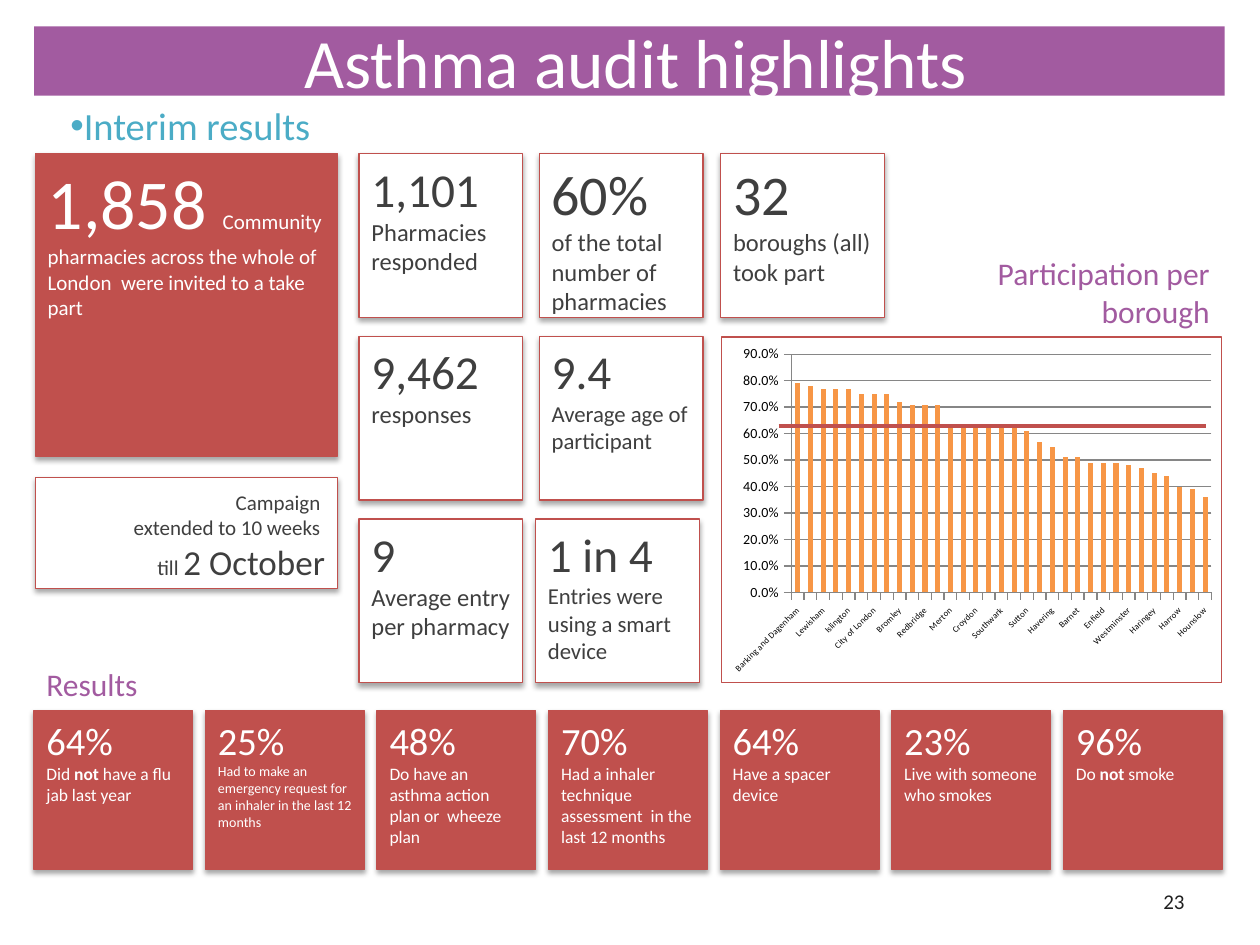
from pptx import Presentation
from pptx.util import Inches, Pt
from pptx.dml.color import RGBColor
from pptx.chart.data import CategoryChartData as Data
from pptx.enum.chart import XL_CHART_TYPE as Kind, XL_TICK_MARK as Tick
from pptx.enum.shapes import MSO_SHAPE as Form, MSO_CONNECTOR as Link
from pptx.enum.text import PP_ALIGN as Al, MSO_ANCHOR as Anc
from pptx.oxml import parse_xml
from pptx.oxml.ns import nsdecls
from lxml.etree import SubElement as Sub

THEME = dict(
    font="Calibri", purple="A25BA0", teal="4BACC6", red="C0504D", white="FFFFFF",
    gray="3F3F3F", dark="202020", black="000000", bar="F79646", grid="868686",
    title=39.6, sub=22, head=18, page=12, num=27, wide=32, huge=40, date=20,
    text=14, snug=13, small=12, fact=22, note=10, tiny=8, cat=5, val=8,
)
T = THEME

STATS = [
    (2.85, 0, [[("1,101", "num")], [("Pharmacies", "text")], [("responded", "text")]]),
    (4.28, 0, [[("60%", "wide")], [("of the total number of pharmacies", "text")]]),
    (5.72, 0, [[("32", "wide"), (" ", "head")], [("boroughs (all) took part", "text")]]),
    (2.85, 1, [[("9,462", "num")], [("responses", "text")]]),
    (4.28, 1, [[("9.4", "num")], [("Average age of participant", "snug")]]),
    (2.85, 2, [[("9", "num")], [("Average entry per pharmacy", "text")]]),
    (4.25, 2, [[("1 in 4", "num")], [("Entries were using a smart device", "snug")]]),
]
INVITE = [[("1,858 ", "huge"), ("Community pharmacies across the whole of London  "
            "were invited to a take part", "small")]]
DATES = [[("Campaign ", "small")], [("extended to 10 weeks ", "small")],
         [("till ", "small"), ("2 October", "date")]]
FACTS = [
    ("64%", [("Did ", "note"), ("not", "note", True), (" have a flu jab last year", "note")]),
    ("25%", [("Had to make an emergency request for an inhaler in the last 12 months", "tiny")]),
    ("48%", [("Do have an asthma action plan or  wheeze plan", "note")]),
    ("70%", [("Had a inhaler technique assessment  in the last 12 months", "note")]),
    ("64%", [("Have a spacer device", "note")]),
    ("23%", [("Live with someone who smokes", "note")]),
    ("96%", [("Do ", "note"), ("not ", "note", True), ("smoke", "note")]),
]
SHARES = [
    ("Barking and Dagenham", 0.79), ("Hackney", 0.78), ("Lewisham", 0.77),
    ("Newham", 0.77), ("Islington", 0.77), ("Lambeth", 0.75),
    ("City of London", 0.75), ("Tower Hamlets", 0.75), ("Bromley", 0.72),
    ("Greenwich", 0.71), ("Redbridge", 0.71), ("Camden", 0.71), ("Merton", 0.63),
    ("Waltham Forest", 0.63), ("Croydon", 0.63), ("Bexley", 0.63),
    ("Southwark", 0.62), ("Kingston upon Thames", 0.62), ("Sutton", 0.61),
    ("Wandsworth", 0.57), ("Havering", 0.55), ("Richmond upon Thames", 0.51),
    ("Barnet", 0.51), ("Hillingdon", 0.49), ("Enfield", 0.49),
    ("Kensington and Chelsea", 0.49), ("Westminster", 0.48),
    ("Hammersmith and Fulham", 0.47), ("Haringey", 0.45), ("Ealing", 0.44),
    ("Harrow", 0.40), ("Brent", 0.39), ("Hounslow", 0.36),
]
FRAME = dict(x=0.14, y=0.05, w=0.84, h=0.69)


def rgb(name):
    return RGBColor.from_string(T[name])


def fill_text(shape, paras, color, align=Al.LEFT, anchor=Anc.TOP):
    frame = shape.text_frame
    frame.word_wrap = True
    frame.vertical_anchor = anchor
    for i, runs in enumerate(paras):
        para = frame.paragraphs[0] if i == 0 else frame.add_paragraph()
        para.alignment = align
        for text, size, *bold in runs:
            run = para.add_run()
            run.text = text
            font = run.font
            font.name, font.size, font.bold = T["font"], Pt(T[size]), bool(bold)
            font.color.rgb = rgb(color)


def add_label(slide, box, text, size, color, align=Al.LEFT, anchor=Anc.TOP):
    shape = slide.shapes.add_textbox(*map(Inches, box))
    fill_text(shape, [[(text, size)]], color, align, anchor)
    return shape


def add_card(slide, box, paras, fill, color, align=Al.LEFT, anchor=Anc.TOP):
    card = slide.shapes.add_shape(Form.RECTANGLE, *map(Inches, box))
    card.fill.solid()
    card.fill.fore_color.rgb = rgb(fill)
    card.line.color.rgb = rgb("red")
    card.line.width = Pt(0.75)
    card.shadow.inherit = False
    glow = card._element.spPr.find(".//{*}effectLst")
    glow.append(parse_xml(
        f'<a:outerShdw {nsdecls("a")} blurRad="39370" dist="22860" dir="5400000" '
        f'rotWithShape="0"><a:srgbClr val="{T["black"]}"><a:alpha val="35000"/>'
        '</a:srgbClr></a:outerShdw>'))
    fill_text(card, paras, color, align, anchor)


def add_heads(slide):
    bar = add_label(slide, (0.27, 0.21, 9.45, 0.55), "Asthma audit highlights",
                    "title", "white", Al.CENTER, Anc.MIDDLE)
    bar.fill.solid()
    bar.fill.fore_color.rgb = rgb("purple")
    bar.text_frame.paragraphs[0]._p.get_or_add_pPr().set("marL", str(Inches(0.1)))
    sub = add_label(slide, (0.27, 0.76, 9.45, 0.47), "Interim results", "sub", "teal")
    para = sub.text_frame.paragraphs[0]
    para.space_before = Pt(4.4)
    props = para._p.get_or_add_pPr()
    props.set("marL", str(Inches(0.19)))
    props.set("indent", "0")
    props.append(parse_xml(f'<a:buFont {nsdecls("a")} typeface="Arial"/>'))
    props.append(parse_xml(f'<a:buChar {nsdecls("a")} char="•"/>'))
    add_label(slide, (7.17, 6.95, 2.33, 0.4), "23", "page", "dark", Al.RIGHT, Anc.MIDDLE)
    add_label(slide, (7.08, 1.97, 2.62, 0.71), "Participation per borough",
              "head", "purple", Al.RIGHT)
    add_label(slide, (0.27, 5.23, 2.62, 0.4), "Results", "head", "purple")


def add_bars(slide):
    data = Data(number_format="0.0%")
    data.categories = [name for name, _ in SHARES]
    data.add_series("Series 1", [share for _, share in SHARES])
    chart = slide.shapes.add_chart(
        Kind.COLUMN_CLUSTERED, *map(Inches, (5.72, 2.67, 3.98, 2.75)), data).chart
    chart.has_title = chart.has_legend = False
    chart.font.name = T["font"]
    chart.font.size = Pt(T["head"])
    chart.font.color.rgb = rgb("black")
    plot = chart.plots[0]
    plot.gap_width = 150
    plot.vary_by_categories = False
    bars = plot.series[0].format.fill
    bars.solid()
    bars.fore_color.rgb = rgb("bar")
    cat, val = chart.category_axis, chart.value_axis
    for axis, size in ((cat, "cat"), (val, "val")):
        axis.major_tick_mark = Tick.OUTSIDE
        axis.tick_labels.font.size = Pt(T[size])
        axis.format.line.color.rgb = rgb("grid")
    cat._element.txPr.bodyPr.set("rot", "-2700000")
    val.minimum_scale, val.maximum_scale, val.major_unit = 0, 0.9, 0.1
    val.tick_labels.number_format = "0.0%"
    val.tick_labels.number_format_is_linked = False
    val.major_gridlines.format.line.color.rgb = rgb("grid")
    root = chart._chartSpace
    root.chart.addnext(parse_xml(
        f'<c:spPr {nsdecls("c", "a")}><a:noFill/><a:ln w="9525"><a:solidFill>'
        f'<a:srgbClr val="{T["red"]}"/></a:solidFill></a:ln></c:spPr>'))
    area = root.chart.plotArea
    for old in area.findall("{*}layout"):
        area.remove(old)
    layout = parse_xml(f'<c:layout {nsdecls("c")}><c:manualLayout/></c:layout>')
    area.insert(0, layout)
    parts = [("layoutTarget", "inner"), ("xMode", "edge"), ("yMode", "edge"), *FRAME.items()]
    for tag, value in parts:
        Sub(layout[0], layout.tag.replace("layout", tag)).set("val", str(value))


def add_mean(slide):
    line = slide.shapes.add_connector(
        Link.STRAIGHT, *map(Inches, (6.18, 3.38, 9.57, 3.38)))
    line.line.color.rgb = rgb("red")
    line.line.width = Pt(2.25)
    line._element.spPr.append(parse_xml(f'<a:effectLst {nsdecls("a")}/>'))


def main():
    """Build the asthma audit slide."""
    deck = Presentation()
    deck.slide_width, deck.slide_height = Inches(10), Inches(7.5)
    slide = deck.slides.add_slide(deck.slide_layouts[6])
    add_heads(slide)
    add_card(slide, (0.28, 1.22, 2.4, 2.4), INVITE, "red", "white")
    add_card(slide, (0.28, 3.79, 2.4, 0.88), DATES, "white", "gray", Al.RIGHT, Anc.BOTTOM)
    for left, row, paras in STATS:
        add_card(slide, (left, 1.22 + 1.45 * row, 1.3, 1.3), paras, "white", "gray")
    step = (8.44 - 0.27) / (len(FACTS) - 1)
    for i, (share, runs) in enumerate(FACTS):
        box = (0.27 + step * i, 5.64, 1.26, 1.26)
        add_card(slide, box, [[(share, "fact")], runs], "red", "white")
    add_bars(slide)
    add_mean(slide)
    deck.save("out.pptx")


if __name__ == "__main__":
    main()
